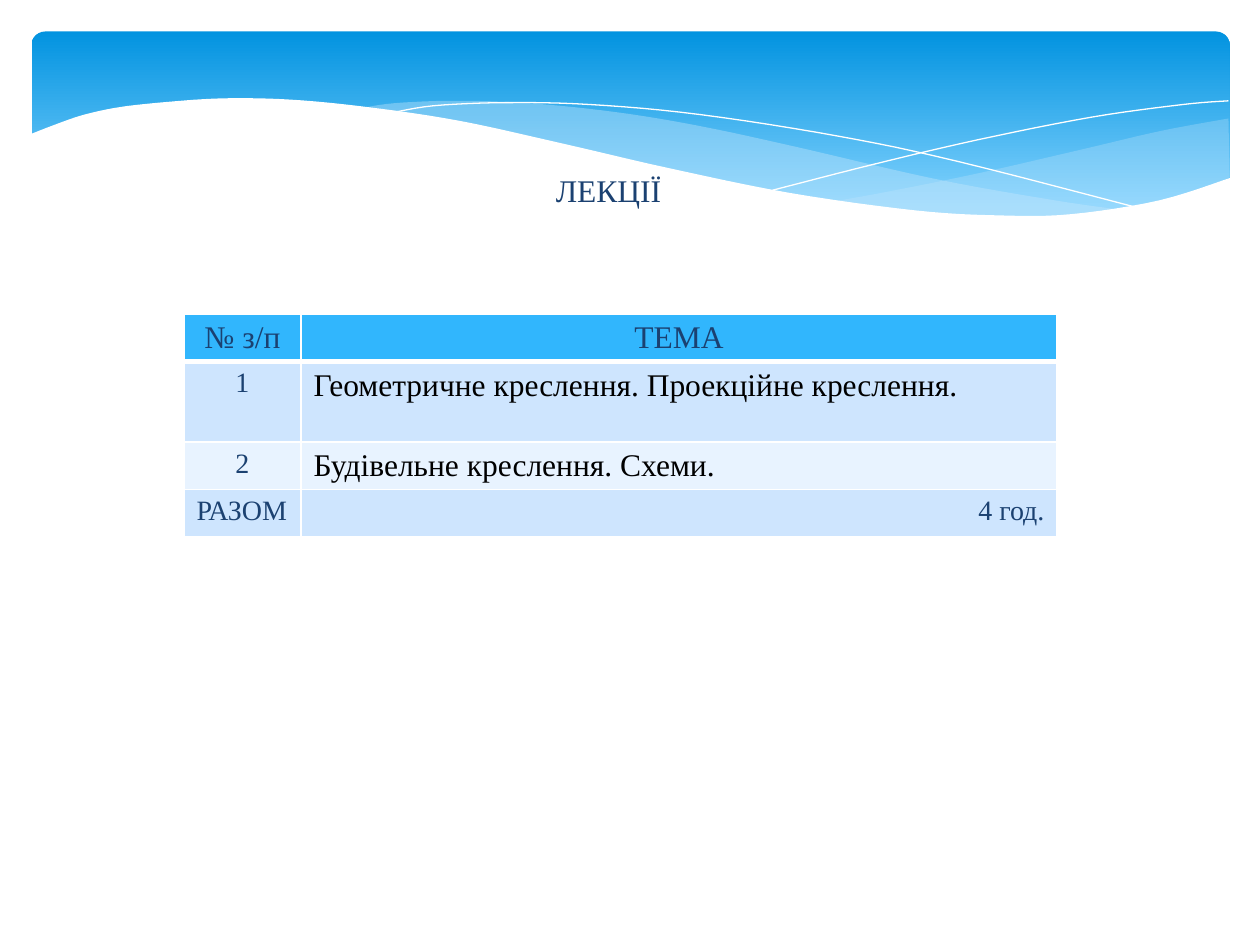
from dataclasses import dataclass

from lxml import etree
from pptx import Presentation
from pptx.dml.color import RGBColor
from pptx.enum import shapes, text
from pptx.oxml.ns import qn
from pptx.util import Pt


@dataclass(frozen=True)
class Theme:
    font: str = "Times New Roman"
    large: int = 18
    small: int = 16
    navy: str = "1B4171"
    black: str = "000000"
    white: str = "FFFFFF"
    sky_top: str = "0293E0"
    sky_bottom: str = "83D3FE"
    wave: str = "C6E7FC"
    header: str = "31B6FD"
    band_dark: str = "CEE5FE"
    band_light: str = "E8F3FF"


THEME = Theme()
LEFT, CENTER, RIGHT = text.PP_ALIGN.LEFT, text.PP_ALIGN.CENTER, text.PP_ALIGN.RIGHT

# Knots of the wave edges, in points
BACK_WAVE = (
    [(702, 67.7), (663, 74.9), (620, 85), (561, 98.6), (508, 109.4), (476, 115.2)],
    [(476, 115.2), (517.7, 120.2), (562, 123.8), (601, 123.8), (640, 119.5),
     (673, 112.3), (702.7, 101.5)],
)
MIDDLE_WAVE = (
    [(642.7, 120.2), (602.6, 114.5), (534, 102.2), (452.9, 83.5), (399.6, 72),
     (352, 64.1), (302.4, 59), (259.9, 57.6), (225.4, 59), (206, 61.9)],
    [(206, 61.9), (246.2, 67.7), (290.9, 76.3), (353.5, 90.7), (420.5, 105.1),
     (479, 115.9), (529.9, 121.7), (581, 124.6), (617, 123.1), (642.7, 120.2)],
)
FALLING_LINE = [(222.5, 64.8), (247.7, 60.5), (288.7, 58.7), (337.7, 59.8),
                (400, 65.5), (478.8, 77.8), (547, 92.2), (653, 119.5)]
RISING_LINE = [(441.4, 108.7), (500.4, 93.6), (558.7, 79.9), (623.5, 67),
               (675.4, 59.8), (702, 57.6)]
FRONT_EDGE = [(703.4, 101.5), (662.4, 114.5), (612, 122.4), (571, 123.1),
              (522.7, 120.2), (451, 110.2), (380.9, 95.8), (321.8, 82.1),
              (262.8, 69.1), (210.2, 61.2), (165.6, 56.9), (127.4, 56.2),
              (95, 58.3), (68.4, 61.2), (48.2, 65.5), (33.1, 70.6), (16.6, 77)]
FRONT_BASE = [(16.6, 161.3), (703.4, 161.3)]

COLUMN_WIDTHS = (66.9, 432)
ROW_HEIGHTS = (26.7, 46, 26.7, 26.7)
# Each cell: wording, alignment, size, colour
LECTURES = [
    (THEME.header, [("№ з/п", CENTER, THEME.large, THEME.navy),
                    ("ТЕМА", CENTER, THEME.large, THEME.navy)]),
    (THEME.band_dark, [("1", CENTER, THEME.small, THEME.navy),
                       ("Геометричне креслення. Проекційне креслення.",
                        LEFT, THEME.large, THEME.black)]),
    (THEME.band_light, [("2", CENTER, THEME.small, THEME.navy),
                        ("Будівельне креслення. Схеми.",
                         LEFT, THEME.large, THEME.black)]),
    (THEME.band_dark, [("РАЗОМ", LEFT, THEME.small, THEME.navy),
                       ("4 год.", RIGHT, THEME.small, THEME.navy)]),
]


def rgb(color):
    return RGBColor.from_string(color)


def smooth(knots, steps=6):
    """Points of a Catmull-Rom curve through the knots."""
    padded = [knots[0], *knots, knots[-1]]
    curve = [knots[0]]
    for a, b, c, d in zip(padded, padded[1:], padded[2:], padded[3:]):
        for step in range(1, steps + 1):
            t = step / steps
            curve.append(tuple(
                (2 * q + (r - p) * t + (2 * p - 5 * q + 4 * r - s) * t ** 2
                 + (3 * q - p - 3 * r + s) * t ** 3) / 2
                for p, q, r, s in zip(a, b, c, d)))
    return curve


def add_outline(slide, points, closed):
    points = [(Pt(x), Pt(y)) for x, y in points]
    builder = slide.shapes.build_freeform(*points[0])
    builder.add_line_segments(points[1:], close=closed)
    outline = builder.convert_to_shape()
    outline.shadow.inherit = False
    return outline


def add_wave(slide, points, color, opacity=100):
    wave = add_outline(slide, points, closed=True)
    wave.fill.solid()
    wave.fill.fore_color.rgb = rgb(color)
    wave.line.fill.background()
    if opacity < 100:
        tint = wave.fill._xPr.find(".//" + qn("a:srgbClr"))
        etree.SubElement(tint, qn("a:alpha"), val=str(opacity * 1000))


def add_hairline(slide, knots):
    hairline = add_outline(slide, smooth(knots), closed=False)
    hairline.fill.background()
    hairline.line.color.rgb = rgb(THEME.white)
    hairline.line.width = Pt(0)


def add_sky(slide):
    sky = slide.shapes.add_shape(shapes.MSO_SHAPE.ROUNDED_RECTANGLE,
                                 Pt(18), Pt(18), Pt(684.7), Pt(112.3))
    sky.adjustments[0] = 0.07
    sky.shadow.inherit = False
    sky.line.fill.background()
    sky.fill.gradient()
    sky.fill.gradient_angle = 270
    colors = ((0, THEME.sky_top), (0.9, THEME.sky_bottom))
    for stop, (position, color) in zip(sky.fill.gradient_stops, colors):
        stop.position = position
        stop.color.rgb = rgb(color)


def write(frame, wording, align, size, color):
    frame.text = wording
    paragraph = frame.paragraphs[0]
    paragraph.alignment = align
    font = paragraph.runs[0].font
    font.name, font.size, font.color.rgb = THEME.font, Pt(size), rgb(color)


def set_borders(cell, bottom, top):
    properties = cell._tc.get_or_add_tcPr()
    for side, width in (("L", 1), ("R", 1), ("T", top), ("B", bottom)):
        border = etree.SubElement(properties, qn(f"a:ln{side}"), w=str(Pt(width)))
        fill = etree.SubElement(border, qn("a:solidFill"))
        etree.SubElement(fill, qn("a:srgbClr"), val=THEME.white)


def add_lecture_table(slide):
    table = slide.shapes.add_table(
        len(LECTURES), len(COLUMN_WIDTHS), Pt(105.1), Pt(179.5),
        Pt(sum(COLUMN_WIDTHS)), Pt(sum(ROW_HEIGHTS))).table
    for column, width in zip(table.columns, COLUMN_WIDTHS):
        column.width = Pt(width)
    for row, height in zip(table.rows, ROW_HEIGHTS):
        row.height = Pt(height)
    for r, (band, entries) in enumerate(LECTURES):
        for c, entry in enumerate(entries):
            cell = table.cell(r, c)
            write(cell.text_frame, *entry)
            set_borders(cell, bottom=3 if r == 0 else 1, top=3 if r == 1 else 1)
            cell.fill.solid()
            cell.fill.fore_color.rgb = rgb(band)


def add_heading(slide):
    heading = slide.shapes.add_textbox(Pt(167), Pt(94.3), Pt(361.4), Pt(29))
    heading.text_frame.word_wrap = True
    write(heading.text_frame, "ЛЕКЦІЇ", CENTER, THEME.large, THEME.navy)


def main():
    deck = Presentation()
    deck.slide_width, deck.slide_height = Pt(720), Pt(540)
    slide = deck.slides.add_slide(deck.slide_layouts[6])
    add_sky(slide)
    for (upper, lower), opacity in ((BACK_WAVE, 29), (MIDDLE_WAVE, 40)):
        add_wave(slide, smooth(upper) + smooth(lower)[1:], THEME.wave, opacity)
    for knots in (FALLING_LINE, RISING_LINE):
        add_hairline(slide, knots)
    add_wave(slide, smooth(FRONT_EDGE) + FRONT_BASE, THEME.white)
    add_lecture_table(slide)
    add_heading(slide)
    deck.save("out.pptx")


if __name__ == "__main__":
    main()
